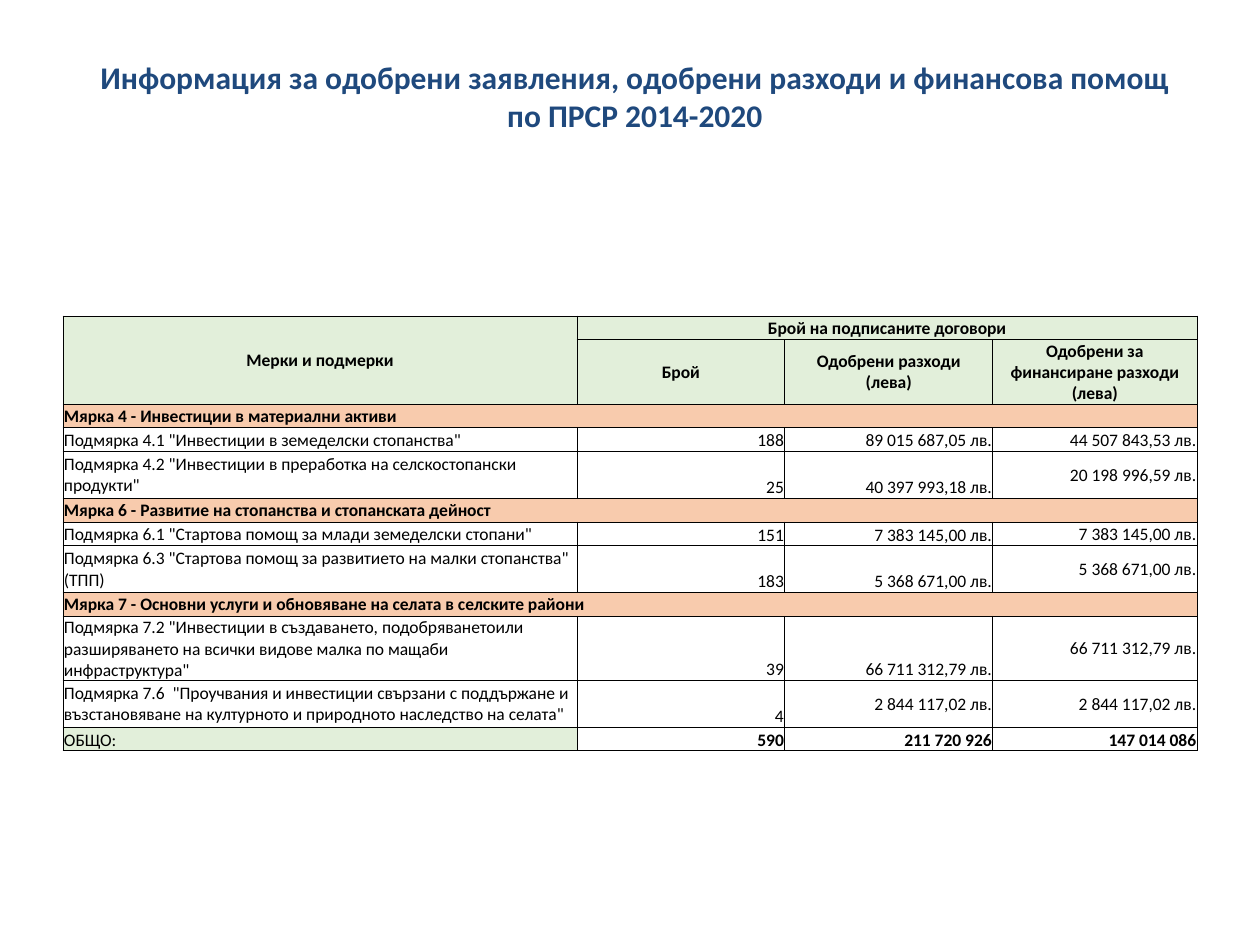
from copy import deepcopy
from dataclasses import dataclass

from pptx import Presentation
from pptx.dml.color import RGBColor as Rgb
from pptx.enum.text import MSO_VERTICAL_ANCHOR as Anchor, PP_PARAGRAPH_ALIGNMENT as Align
from pptx.oxml import parse_xml
from pptx.oxml.ns import nsdecls, qn
from pptx.util import Cm, Pt


@dataclass(frozen=True)
class Theme:
    font: str = "Calibri"
    title_size: float = 18
    table_size: float = 10
    title: str = "1F497D"
    ink: str = "000000"
    header: str = "E2EFDA"
    measure: str = "F8CBAD"
    border_width: float = 0.5


class SlideBuilder:
    def __init__(self, slide, theme):
        self.slide = slide
        self.theme = theme

    def style(self, paragraph, size, color, bold, align):
        """Format every run, and give line breaks the same character format."""
        paragraph.alignment = align
        for run in paragraph.runs:
            run.font.name = self.theme.font
            run.font.size = Pt(size)
            run.font.bold = bold
            run.font.color.rgb = Rgb.from_string(color)
        for line_break in paragraph._p.findall(qn("a:br")):
            line_break.append(deepcopy(paragraph.runs[0]._r.rPr))

    def title(self, text, left, top, width, height):
        frame = self.slide.shapes.add_textbox(left, top, width, height).text_frame
        frame.word_wrap = True
        frame.text = text
        self.style(frame.paragraphs[0], self.theme.title_size, self.theme.title, True, Align.CENTER)

    def table(self, left, top, column_widths, row_heights):
        grid = self.slide.shapes.add_table(
            len(row_heights), len(column_widths), left, top, sum(column_widths), sum(row_heights)
        ).table
        grid.first_row = grid.horz_banding = False
        for column, width in zip(grid.columns, column_widths):
            column.width = width
        for row, height in zip(grid.rows, row_heights):
            row.height = height
        for cell in grid.iter_cells():
            cell.margin_left = cell.margin_right = cell.margin_top = Cm(0.02)
            cell.margin_bottom = 0
            self.border(cell)
            cell.fill.background()
        return grid

    def border(self, cell):
        for side in ("lnL", "lnR", "lnT", "lnB"):
            cell._tc.get_or_add_tcPr().append(parse_xml(
                f'<a:{side} {nsdecls("a")} w="{Pt(self.theme.border_width)}"><a:solidFill>'
                f'<a:srgbClr val="{self.theme.ink}"/></a:solidFill></a:{side}>'
            ))

    def cell(self, cell, text, align=Align.LEFT, anchor=Anchor.MIDDLE, bold=False, fill=None):
        paragraph = cell.text_frame.paragraphs[0]
        paragraph.text = text
        self.style(paragraph, self.theme.table_size, self.theme.ink, bold, align)
        cell.vertical_anchor = anchor
        if fill:
            cell.fill.solid()
            cell.fill.fore_color.rgb = Rgb.from_string(fill)

    def header(self, cell, text):
        self.cell(cell, text, Align.CENTER, bold=True, fill=self.theme.header)


ONE_LINE, TWO_LINES, THREE_LINES = Cm(0.48), Cm(0.94), Cm(1.27)
COLUMN_WIDTHS = [Cm(10.36), Cm(4.19), Cm(4.19), Cm(4.12)]
COLUMN_HEADERS = ["Брой", "Одобрени разходи\n(лева)", "Одобрени за финансиране разходи\n(лева)"]

# A row with a single text is a measure heading; the others are submeasures.
ROWS = [
    (ONE_LINE, "Мярка 4 - Инвестиции в материални активи"),
    (ONE_LINE, 'Подмярка 4.1 "Инвестиции в земеделски стопанства"',
     "188", "89 015 687,05 лв.", "44 507 843,53 лв."),
    (TWO_LINES, 'Подмярка 4.2 "Инвестиции в преработка на селскостопански продукти"',
     "25", "40 397 993,18 лв.", "20 198 996,59 лв."),
    (ONE_LINE, "Мярка 6 - Развитие на стопанства и стопанската дейност"),
    (ONE_LINE, 'Подмярка 6.1 "Стартова помощ за млади земеделски стопани"',
     "151", "7 383 145,00 лв.", "7 383 145,00 лв."),
    (TWO_LINES, 'Подмярка 6.3 "Стартова помощ за развитието на малки стопанства" (ТПП)',
     "183", "5 368 671,00 лв.", "5 368 671,00 лв."),
    (ONE_LINE, "Мярка 7 - Основни услуги и обновяване на селата в селските райони"),
    (TWO_LINES, 'Подмярка 7.2 "Инвестиции в създаването, подобряванетоили разширяването '
     'на всички видове малка по мащаби инфраструктура"',
     "39", "66 711 312,79 лв.", "66 711 312,79 лв."),
    (TWO_LINES, 'Подмярка 7.6  "Проучвания и инвестиции свързани с поддържане и '
     'възстановяване на културното и природното наследство на селата"',
     "4", "2 844 117,02 лв.", "2 844 117,02 лв."),
]
TOTALS = ["590", "211 720 926", "147 014 086"]


def fill_headers(builder, grid):
    grid.cell(0, 0).merge(grid.cell(1, 0))
    grid.cell(0, 1).merge(grid.cell(0, 3))
    builder.header(grid.cell(0, 0), "Мерки и подмерки")
    builder.header(grid.cell(0, 1), "Брой на подписаните договори")
    for column, heading in enumerate(COLUMN_HEADERS, start=1):
        builder.header(grid.cell(1, column), heading)


def fill_measures(builder, grid):
    for row, (_, name, *values) in enumerate(ROWS, start=2):
        if not values:
            grid.cell(row, 0).merge(grid.cell(row, 3))
            builder.cell(grid.cell(row, 0), name, bold=True, fill=builder.theme.measure)
            continue
        builder.cell(grid.cell(row, 0), name)
        anchors = [Anchor.BOTTOM, Anchor.BOTTOM, Anchor.MIDDLE]
        if name.startswith("Подмярка 7.6"):
            anchors[1] = Anchor.MIDDLE
        for column, (value, anchor) in enumerate(zip(values, anchors), start=1):
            builder.cell(grid.cell(row, column), value, Align.RIGHT, anchor)


def fill_totals(builder, grid):
    last = len(grid.rows) - 1
    builder.cell(grid.cell(last, 0), "ОБЩО:", anchor=Anchor.BOTTOM, fill=builder.theme.header)
    for column, total in enumerate(TOTALS, start=1):
        builder.cell(grid.cell(last, column), total, Align.RIGHT, Anchor.BOTTOM, bold=True)


def main():
    deck = Presentation()
    deck.slide_width, deck.slide_height = Cm(25.4), Cm(19.05)
    builder = SlideBuilder(deck.slides.add_slide(deck.slide_layouts[6]), Theme())
    builder.title(
        "Информация за одобрени заявления, одобрени разходи и финансова помощ по ПРСР 2014-2020",
        Cm(1.37), Cm(1.04), Cm(22.86), Cm(1.8),
    )
    row_heights = [ONE_LINE, THREE_LINES, *(height for height, *_ in ROWS), ONE_LINE]
    grid = builder.table(Cm(1.27), Cm(6.37), COLUMN_WIDTHS, row_heights)
    fill_headers(builder, grid)
    fill_measures(builder, grid)
    fill_totals(builder, grid)
    deck.save("out.pptx")


if __name__ == "__main__":
    main()
